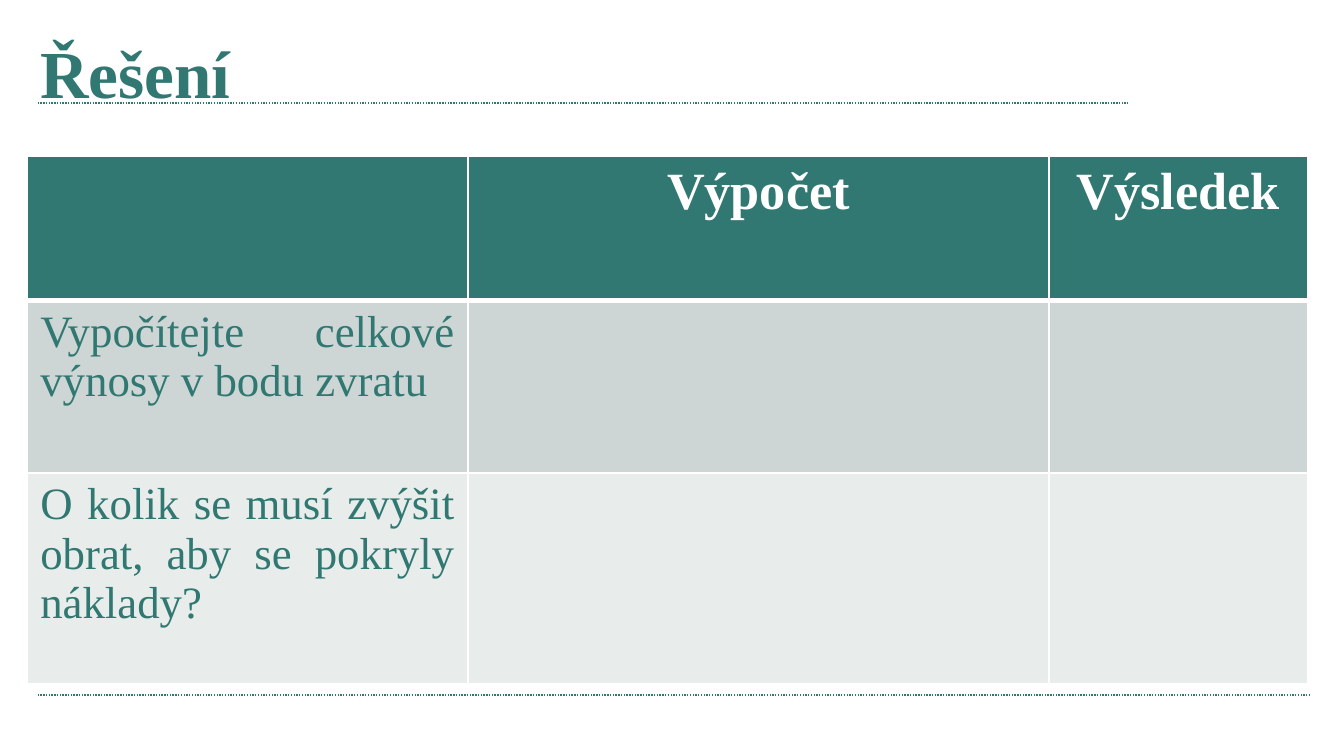
from pptx import Presentation
from pptx.dml.color import RGBColor
from pptx.enum.dml import MSO_LINE
from pptx.enum.shapes import MSO_CONNECTOR
from pptx.enum.text import MSO_ANCHOR, PP_ALIGN as Align
from pptx.oxml import parse_xml
from pptx.oxml.ns import nsdecls
from pptx.util import Pt

TEAL, WHITE = "307871", "FFFFFF"
ROW_FILLS = [TEAL, "CDD6D5", "E8ECEB"]
COLUMN_WIDTHS = [236.2, 311.4, 138.4]
ROW_HEIGHTS = [77.4, 92.2, 113]
ROWS = [
    ["", "Výpočet", "Výsledek"],
    ["Vypočítejte celkové výnosy v bodu zvratu", "", ""],
    ["O kolik se musí zvýšit obrat, aby se pokryly náklady?", "", ""],
]


def color(code):
    return RGBColor.from_string(code)


class SlideBuilder:
    font_name = "Times New Roman"

    def __init__(self, page):
        self.page = page

    def style(self, paragraph, size, code, bold=False, align=None):
        paragraph.alignment = align
        font = paragraph.font
        font.name, font.size, font.bold = self.font_name, Pt(size), bold
        font.color.rgb = color(code)

    def title(self, text, left, top, width, height):
        box = self.page.shapes.add_textbox(Pt(left), Pt(top), Pt(width), Pt(height))
        frame = box.text_frame
        frame.word_wrap = True
        frame.vertical_anchor = MSO_ANCHOR.MIDDLE
        frame.text = text
        self.style(frame.paragraphs[0], 36, TEAL, bold=True)

    def dotted_rule(self, left, right, y):
        rule = self.page.shapes.add_connector(
            MSO_CONNECTOR.STRAIGHT, Pt(left), Pt(y), Pt(right), Pt(y))
        rule.line.color.rgb = color(TEAL)
        rule.line.width = Pt(0.75)
        rule.line.dash_style = MSO_LINE.ROUND_DOT
        rule._element.spPr.append(parse_xml(f"<a:effectLst {nsdecls('a')}/>"))

    def borders(self, cell, **widths):
        """Draw white cell borders; widths are keyed by side L, R, T, B."""
        properties = cell._tc.get_or_add_tcPr()
        for position, side in enumerate("LRTB"):
            properties.insert(position, parse_xml(
                f'<a:ln{side} {nsdecls("a")} w="{Pt(widths.get(side, 1))}">'
                f'<a:solidFill><a:srgbClr val="{WHITE}"/></a:solidFill></a:ln{side}>'))

    def table(self, left, top):
        table = self.page.shapes.add_table(
            len(ROWS), len(COLUMN_WIDTHS), Pt(left), Pt(top),
            Pt(sum(COLUMN_WIDTHS)), Pt(sum(ROW_HEIGHTS))).table
        for column, width in zip(table.columns, COLUMN_WIDTHS):
            column.width = Pt(width)
        for number, (row, height, texts) in enumerate(zip(table.rows, ROW_HEIGHTS, ROWS)):
            row.height = Pt(height)
            for cell, text in zip(row.cells, texts):
                cell.fill.solid()
                cell.fill.fore_color.rgb = color(ROW_FILLS[number])
                self.borders(cell, T=3 if number == 1 else 1, B=3 if number == 0 else 1)
                cell.text = text
                paragraph = cell.text_frame.paragraphs[0]
                if number == 0:
                    self.style(paragraph, 28, WHITE, bold=True, align=Align.CENTER)
                else:
                    self.style(paragraph, 24, TEAL, align=Align.JUSTIFY)


def main():
    deck = Presentation()
    deck.slide_width, deck.slide_height = Pt(720), Pt(405)
    slide = SlideBuilder(deck.slides.add_slide(deck.slide_layouts[6]))
    slide.dotted_rule(20.2, 604, 55.3)
    slide.dotted_rule(20.2, 702, 372.4)
    slide.title("Řešení", 14.4, 10, 635, 57)
    slide.table(14.4, 83.8)
    deck.save("out.pptx")


if __name__ == "__main__":
    main()
